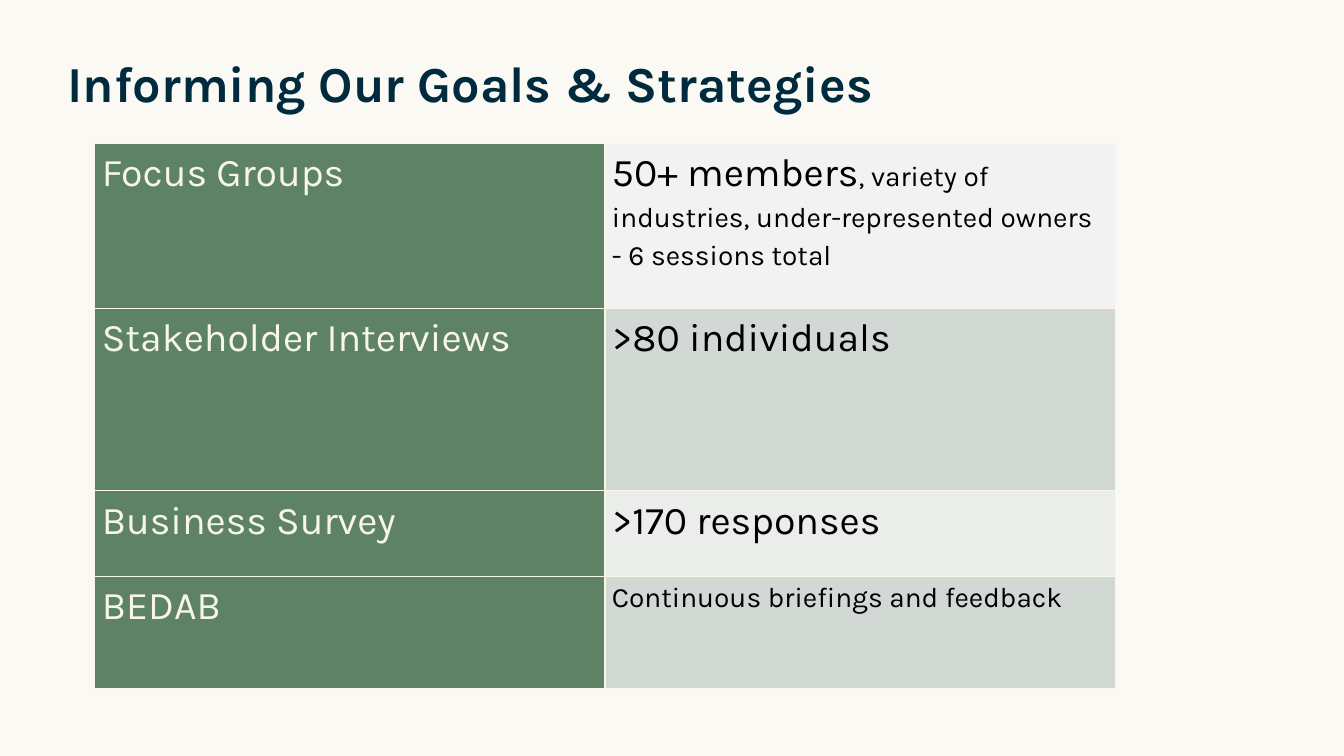
from typing import Any, NamedTuple

from lxml import etree
from pptx import Presentation
from pptx.dml.color import RGBColor
from pptx.enum.text import MSO_ANCHOR, MSO_AUTO_SIZE, PP_ALIGN
from pptx.oxml.ns import qn
from pptx.util import Pt

PX = 9144  # 100 px to the inch
TOP, BOTTOM = MSO_ANCHOR.TOP, MSO_ANCHOR.BOTTOM
LEFT, NO_FIT = PP_ALIGN.LEFT, MSO_AUTO_SIZE.NONE
TITLE_ONLY = 5

FACE = "Karla"
PAPER, NAVY, CREAM, GREEN, BLACK = "FAF9F3", "002B3E", "F8F7E6", "5D8266", "000000"
BIG, SMALL = 28, 20
COL = 506


class Piece(NamedTuple):
    text: str
    size: int = BIG


class Row(NamedTuple):
    high: int
    label: str
    tint: str
    detail: list[Piece]


ROWS = [
    Row(164, "Focus Groups", "F2F2F2", [
        Piece("50+ members"),
        Piece(", variety of industries, under-represented owners\n- 6 sessions total", SMALL),
    ]),
    Row(181, "Stakeholder Interviews", "D2D8D3", [Piece(">80 individuals")]),
    Row(85, "Business Survey", "EAEDEA", [Piece(">170 responses")]),
    Row(111, "BEDAB", "D2D8D3", [Piece("Continuous briefings and feedback", SMALL)]),
]


def px(num: int) -> int:
    return num * PX


def rgb(code: str) -> RGBColor:
    return RGBColor.from_string(code)


def put(item: Any, form: dict[str, Any]) -> None:
    for name, value in form.items():
        setattr(item, name, value)


def paint(fill: Any, code: str) -> None:
    fill.solid()
    fill.fore_color.rgb = rgb(code)


def style(font: Any, size: int, code: str, bold: bool = False) -> None:
    put(font, {"name": FACE, "size": Pt(size), "bold": bold})
    font.color.rgb = rgb(code)


def edge(cell: Any, code: str) -> None:
    """Draw a 1 pt line on all four sides of a cell."""
    props = cell._tc.get_or_add_tcPr()
    for spot, side in enumerate(("a:lnL", "a:lnR", "a:lnT", "a:lnB")):
        line = etree.Element(qn(side), w=str(Pt(1)))
        solid = etree.SubElement(line, qn("a:solidFill"))
        etree.SubElement(solid, qn("a:srgbClr"), val=code)
        props.insert(spot, line)


def write(cell: Any, pieces: list[Piece], ink: str, back: str) -> None:
    put(cell, {"margin_left": px(7), "margin_right": px(7), "margin_top": 0,
               "margin_bottom": 0, "vertical_anchor": TOP})
    paint(cell.fill, back)
    edge(cell, CREAM)
    para = cell.text_frame.paragraphs[0]
    put(para, {"line_spacing": 1.16, "space_after": Pt(8), "alignment": LEFT})
    for piece in pieces:
        for num, line in enumerate(piece.text.split("\n")):
            if num:
                para.add_line_break()
            run = para.add_run()
            run.text = line
            style(run.font, piece.size, ink)


def head(slide: Any, text: str) -> None:
    title = slide.shapes.title
    put(title, {"left": px(57), "top": px(40), "width": px(1218), "height": px(78)})
    frame = title.text_frame
    put(frame, {"text": text, "word_wrap": True, "auto_size": NO_FIT,
                "vertical_anchor": BOTTOM})
    para = frame.paragraphs[0]
    put(para, {"line_spacing": 0.9, "alignment": LEFT})
    style(para.runs[0].font, 36, NAVY, True)


def grid(slide: Any, rows: list[Row]) -> None:
    high = sum(row.high for row in rows)
    table = slide.shapes.add_table(len(rows), 2, px(94), px(142), px(2 * COL), px(high)).table
    put(table, {"first_row": False, "horz_banding": False})
    for col in table.columns:
        col.width = px(COL)
    for num, row in enumerate(rows):
        table.rows[num].height = px(row.high)
        write(table.cell(num, 0), [Piece(row.label)], CREAM, GREEN)
        write(table.cell(num, 1), row.detail, BLACK, row.tint)


def main() -> None:
    deck = Presentation()
    put(deck, {"slide_width": px(1333), "slide_height": px(750)})
    slide = deck.slides.add_slide(deck.slide_layouts[TITLE_ONLY])
    paint(slide.background.fill, PAPER)
    head(slide, "Informing Our Goals & Strategies")
    grid(slide, ROWS)
    deck.save("out.pptx")


if __name__ == "__main__":
    main()
